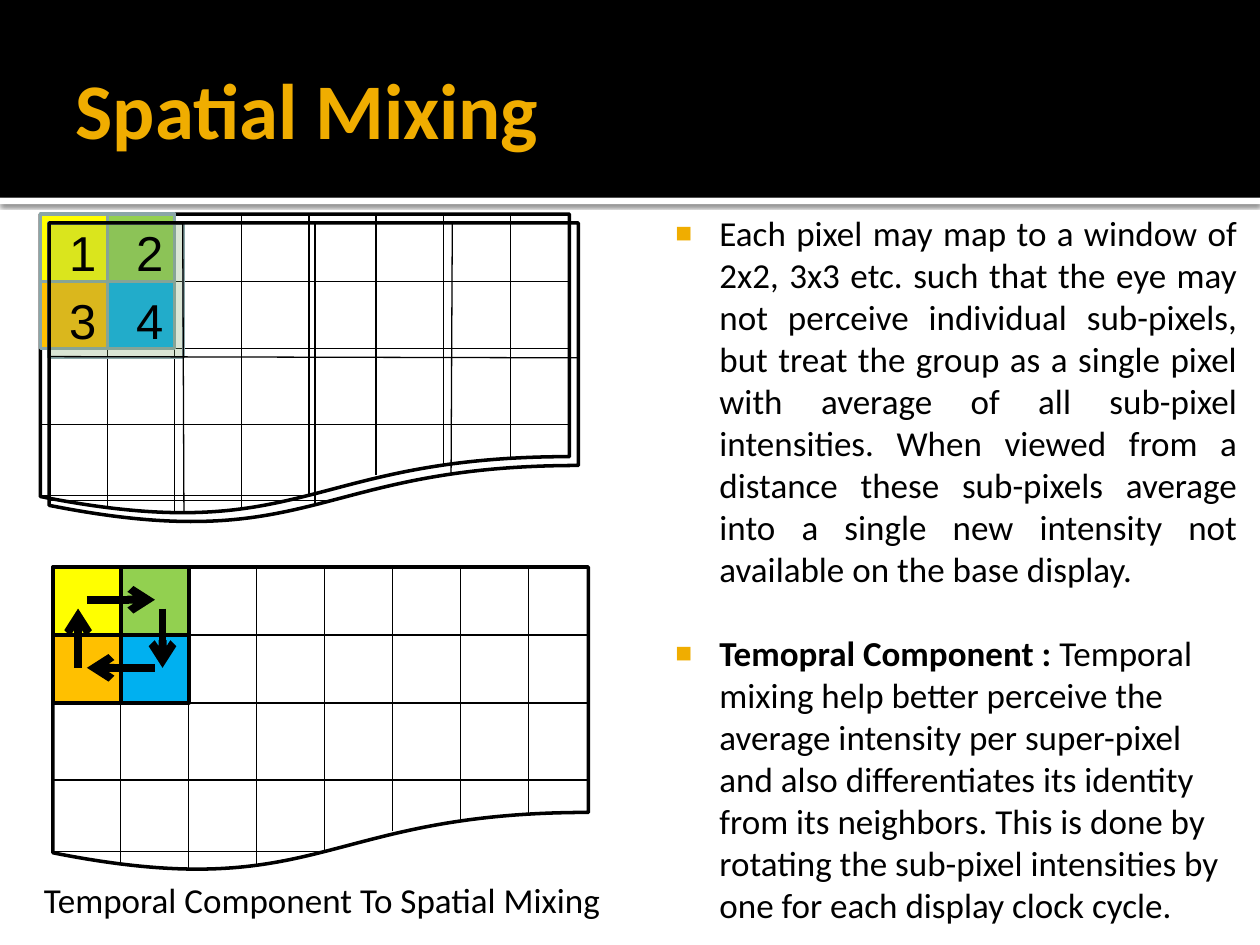
from lxml.etree import SubElement
from pptx import Presentation
from pptx.dml.color import RGBColor
from pptx.enum.shapes import MSO_CONNECTOR as CONN, MSO_SHAPE as SHAPE
from pptx.enum.text import MSO_ANCHOR as ANCHOR, MSO_AUTO_SIZE as AUTO, PP_ALIGN as ALIGN
from pptx.oxml.ns import qn
from pptx.util import Inches, Pt

# Content
TITLE = "Spatial Mixing"
CAPTION = "Temporal Component To Spatial Mixing"
BULLETS = [
    (ALIGN.JUSTIFY, 0, [(
        "Each pixel may map to a window of 2x2, 3x3 etc. such that the eye may not perceive "
        "individual sub-pixels, but treat the group as a single pixel with average of all "
        "sub-pixel intensities. When viewed from a distance these sub-pixels average into a "
        "single new intensity not available on the base display.", False)]),
    (ALIGN.LEFT, 24, [
        ("Temopral Component : ", True),
        ("Temporal mixing help better perceive the average intensity per super-pixel and also "
         "differentiates its identity from its neighbors. This is done by rotating the sub-pixel "
         "intensities by one for each display clock cycle.", False)]),
]
COLORS = {"black": "000000", "white": "FFFFFF", "accent": "F0AD00", "frame": "8AA6A8",
          "window": "7DA26A", "yellow": "FFFF00", "green": "92D050",
          "orange": "FFC000", "blue": "00B0F0"}
SUB_PIXELS = ["yellow", "green", "orange", "blue"]

# Display geometry in inches, relative to its top left corner
WIDTH, HEIGHT, CELL = 4.2, 2.4, 0.533
COLUMN_ENDS = [2.33, 2.37, 2.33, 2.24, 2.07, 2.0, 1.93]
ROWS = [(CELL, WIDTH), (2 * CELL, WIDTH), (1.67, WIDTH), (2.23, 4 * CELL)]
SHIFTED_LINES = [(1.06, 0, 1.07, 2.3), (0, 1.06, 4.19, 1.07), (2.11, 0.01, 2.11, 2.23),
                 (3.2, 0, 3.19, 2), (0, 2.2, 2.2, 2.2)]
ROTATION = [(0.27, 0.26, 0.81, 0.26), (0.81, 0.8, 0.27, 0.8),
            (0.87, 0.33, 0.87, 0.8), (0.2, 0.8, 0.2, 0.33)]


def rgb(name):
    return RGBColor.from_string(COLORS[name])


def add_box(shapes, kind, box, fill=None, line=None):
    sp = shapes.add_shape(kind, *map(Inches, box))
    sp.shadow.inherit = False
    if fill:
        sp.fill.solid()
        sp.fill.fore_color.rgb = rgb(fill)
    else:
        sp.fill.background()
    if line:
        sp.line.color.rgb = rgb(line)
        sp.line.width = Pt(2)
    else:
        sp.line.fill.background()
    return sp


def add_line(shapes, origin, ends, width=0.75, arrow=False):
    x, y = origin
    x1, y1, x2, y2 = ends
    cn = shapes.add_connector(CONN.STRAIGHT, *map(Inches, (x + x1, y + y1, x + x2, y + y2)))
    cn.line.color.rgb = rgb("black")
    cn.line.width = Pt(width)
    if arrow:
        SubElement(cn.line._get_or_add_ln(), qn("a:tailEnd"), type="arrow")
    SubElement(cn._element.spPr, qn("a:effectLst"))


def add_run(p, text, size, color="black", font="Calibri", bold=False):
    r = p.add_run()
    r.text = text
    for key, value in {"size": Pt(size), "name": font, "bold": bold}.items():
        setattr(r.font, key, value)
    r.font.color.rgb = rgb(color)


def add_label(shapes, box, text, size, font):
    tf = shapes.add_textbox(*map(Inches, box)).text_frame
    tf.word_wrap = True
    add_run(tf.paragraphs[0], text, size, font=font)


def place(sp, box, margins, anchor):
    sp.left, sp.top, sp.width, sp.height = map(Inches, box)
    tf = sp.text_frame
    tf.margin_left, tf.margin_top, tf.margin_right, tf.margin_bottom = map(Inches, margins)
    tf.vertical_anchor, tf.auto_size, tf.word_wrap = anchor, AUTO.NONE, True
    return tf


def sub_pixel_spots(origin, cell):
    return [(origin[0] + i % 2 * cell, origin[1] + i // 2 * cell) for i in range(4)]


def add_display(shapes, origin, scale, frame):
    """Pixel grid with a 2x2 super-pixel in its top left corner."""
    cell = CELL * scale
    add_box(shapes, SHAPE.FLOWCHART_DOCUMENT, (*origin, WIDTH * scale, HEIGHT * scale),
            "white", "black")
    for i, end in enumerate(COLUMN_ENDS, 1):
        add_line(shapes, origin, (i * cell, 0, i * cell, end * scale))
    for y, end in ROWS:
        add_line(shapes, origin, (0, y * scale, end * scale, y * scale))
    for spot, color in zip(sub_pixel_spots(origin, cell), SUB_PIXELS):
        add_box(shapes, SHAPE.RECTANGLE, (*spot, cell, cell), color, frame)


prs = Presentation()
prs.slide_width, prs.slide_height = Inches(10), Inches(7.5)
s = prs.slides.add_slide(prs.slide_layouts[1])

# Header bands, behind the title
rule = add_box(s.shapes, SHAPE.RECTANGLE, (0, 1.57, 10, 0.05), "white")
effects = rule._element.spPr.find(qn("a:effectLst"))
shadow = SubElement(effects, qn("a:outerShdw"), blurRad=str(Pt(2.5)), dist=str(Pt(0.8)),
                    dir="5400000", algn="t", rotWithShape="0")
shade = SubElement(shadow, qn("a:srgbClr"), val=COLORS["black"])
SubElement(shade, qn("a:alpha"), val="60000")
header = add_box(s.shapes, SHAPE.RECTANGLE, (0, 0, 10, 1.57), "black")
for i, band in enumerate((rule, header), 2):
    s.shapes._spTree.insert(i, band._element)

# Title
tf = place(s.shapes.title, (0.5, 0.17, 9, 1.37), (0.1, 0.05, 0.05, 0.05), ANCHOR.MIDDLE)
tf.paragraphs[0].alignment = ALIGN.LEFT
add_run(tf.paragraphs[0], TITLE, 45, "accent", bold=True)

# Spatial mixing: numbered super-pixel with a shifted window and grid
spatial = s.shapes.add_group_shape().shapes
origin, shifted = (0.32, 1.7), (0.39, 1.77)
add_display(spatial, origin, 1, "frame")
window = add_box(spatial, SHAPE.RECTANGLE, (*shifted, 2 * CELL, 2 * CELL), "window", "frame")
tint = window._element.spPr.find(qn("a:solidFill"))[0]
SubElement(tint, qn("a:alpha"), val="28000")
add_box(spatial, SHAPE.FLOWCHART_DOCUMENT, (*shifted, WIDTH, HEIGHT), line="black")
for ends in SHIFTED_LINES:
    add_line(spatial, shifted, ends)
for n, (x, y) in enumerate(sub_pixel_spots((0.45, 1.72), CELL), 1):
    add_label(spatial, (x, y, 0.27, 0.57), str(n), 28, "Arial")

# Temporal mixing: arrows rotate the sub-pixels
temporal = s.shapes.add_group_shape().shapes
origin = (0.42, 4.5)
add_display(temporal, origin, 1.012, "black")
for ends in ROTATION:
    add_line(temporal, origin, ends, 4.5, arrow=True)
add_label(s.shapes, (0.25, 6.92, 4.75, 0.44), CAPTION, 20, "Calibri")

# Bulleted explanation
tf = place(s.placeholders[1], (5.17, 1.58, 4.75, 5.92), (0.06, 0.1, 0.1, 0.05), ANCHOR.TOP)
for i, (align, before, runs) in enumerate(BULLETS):
    p = tf.add_paragraph() if i else tf.paragraphs[0]
    pPr = p._p.get_or_add_pPr()
    pPr.set("marL", str(Inches(0.48)))
    pPr.set("indent", str(Inches(-0.35)))
    p.alignment, p.space_before = align, Pt(before)
    SubElement(SubElement(pPr, qn("a:buClr")), qn("a:srgbClr"), val=COLORS["accent"])
    SubElement(pPr, qn("a:buSzPct"), val="80000")
    SubElement(pPr, qn("a:buFont"), typeface="Arial")
    SubElement(pPr, qn("a:buChar"), char="■")
    for text, bold in runs:
        add_run(p, text, 20, bold=bold)

prs.save("out.pptx")
